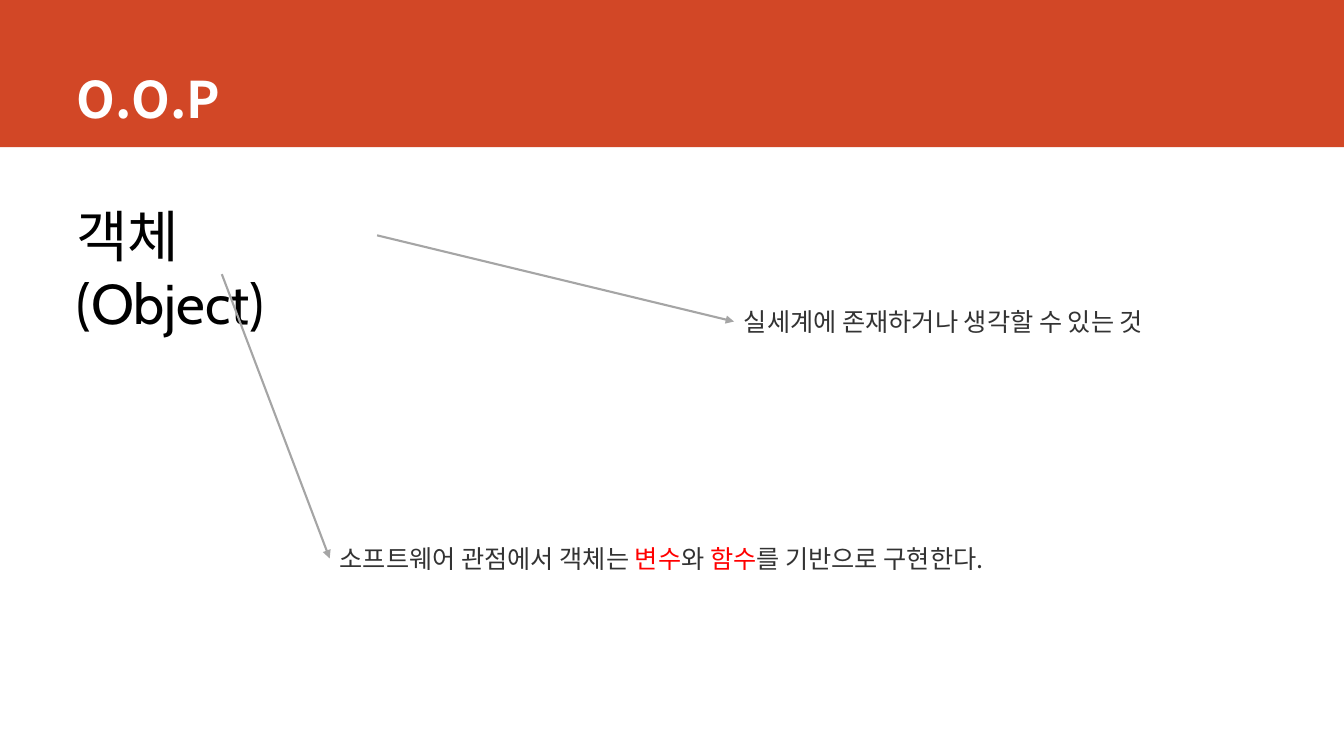
"""Builds the O.O.P slide that explains what an object is."""
from dataclasses import dataclass

from lxml import etree
from pptx import Presentation
from pptx import util as u
from pptx.dml.color import RGBColor
from pptx.enum import shapes, text
from pptx.oxml.ns import qn

PX = 9144
SANS = "Noto Sans CJK KR"
RED, GREY, INK, ARROW = "FF0000", "333333", "000000", "A5A5A5"
TOP, LEFT, BOTTOM, RIGHT = range(4)


@dataclass
class Label:
    """A text box whose runs are (wording, colour) pairs."""

    box: tuple[int, int, int, int]
    runs: list[tuple[str, str]]
    size: int = 18
    font: str = SANS
    bold: bool = False
    wrap: bool = True
    anchor: text.MSO_ANCHOR = text.MSO_ANCHOR.TOP
    fit: text.MSO_AUTO_SIZE = text.MSO_AUTO_SIZE.SHAPE_TO_FIT_TEXT
    right_inset: int = 10


@dataclass
class Arrow:
    """An arrow from one side of a label to the left side of another."""

    start: str
    side: int
    end: str


LABELS = {
    "title": Label((66, 0, 1176, 132), [("O.O.P", "FFFFFF")], 36, bold=True,
                   anchor=text.MSO_ANCHOR.BOTTOM, fit=text.MSO_AUTO_SIZE.NONE),
    "object": Label((66, 195, 308, 77), [("객체(Object)", INK)], 40, "Cabin",
                    right_inset=30),
    "real_world": Label((728, 299, 434, 40),
                        [("실세계에 존재하거나 생각할 수 있는 것", GREY)], wrap=False),
    "software": Label((327, 534, 835, 40), [
        ("소프트웨어 관점에서 객체는 ", GREY), ("변수", RED), ("와 ", GREY),
        ("함수", RED), ("를 기반으로 구현한다.", GREY)]),
}
ARROWS = [Arrow("object", RIGHT, "real_world"), Arrow("object", BOTTOM, "software")]


def px(*lengths: int) -> list[u.Emu]:
    """Turn px lengths into EMU."""
    return [u.Emu(length * PX) for length in lengths]


def colour(value: str) -> RGBColor:
    """Turn a hex string into a colour."""
    return RGBColor.from_string(value)


def draw_band(slide) -> None:
    """Draw the coloured band behind the title."""
    band = slide.shapes.add_shape(shapes.MSO_SHAPE.RECTANGLE, *px(0, 0, 1333, 146))
    band.shadow.inherit = False
    band.fill.solid()
    band.fill.fore_color.rgb = colour("D24726")
    band.line.fill.background()


def draw_label(slide, label: Label):
    """Draw a label and return its text box."""
    box = slide.shapes.add_textbox(*px(*label.box))
    frame = box.text_frame
    frame_format = {"word_wrap": label.wrap, "vertical_anchor": label.anchor,
                    "auto_size": label.fit, "margin_right": px(label.right_inset)[0]}
    for key, value in frame_format.items():
        setattr(frame, key, value)
    font_format = {"name": label.font, "size": u.Pt(label.size), "bold": label.bold}
    for wording, tint in label.runs:
        run = frame.paragraphs[0].add_run()
        run.text = wording
        for key, value in font_format.items():
            setattr(run.font, key, value)
        run.font.color.rgb = colour(tint)
        east_asian = etree.SubElement(run.font._element, qn("a:ea"))
        east_asian.set("typeface", SANS)
    return box


def draw_arrow(slide, arrow: Arrow, boxes: dict) -> None:
    """Join two labels with an arrow."""
    line = slide.shapes.add_connector(shapes.MSO_CONNECTOR.STRAIGHT, *px(0, 0, 0, 0))
    line.begin_connect(boxes[arrow.start], arrow.side)
    line.end_connect(boxes[arrow.end], LEFT)
    line.line.width = u.Pt(1.5)
    line.line.color.rgb = colour(ARROW)
    stroke = line.line._get_or_add_ln()
    etree.SubElement(stroke, qn("a:tailEnd")).set("type", "triangle")
    etree.SubElement(line._element.spPr, qn("a:effectLst"))


def main() -> None:
    """Build and save the slide."""
    deck = Presentation()
    deck.slide_width, deck.slide_height = px(1333, 750)
    slide = deck.slides.add_slide(deck.slide_layouts[6])
    draw_band(slide)
    boxes = {name: draw_label(slide, label) for name, label in LABELS.items()}
    for arrow in ARROWS:
        draw_arrow(slide, arrow, boxes)
    deck.save("out.pptx")


if __name__ == "__main__":
    main()
